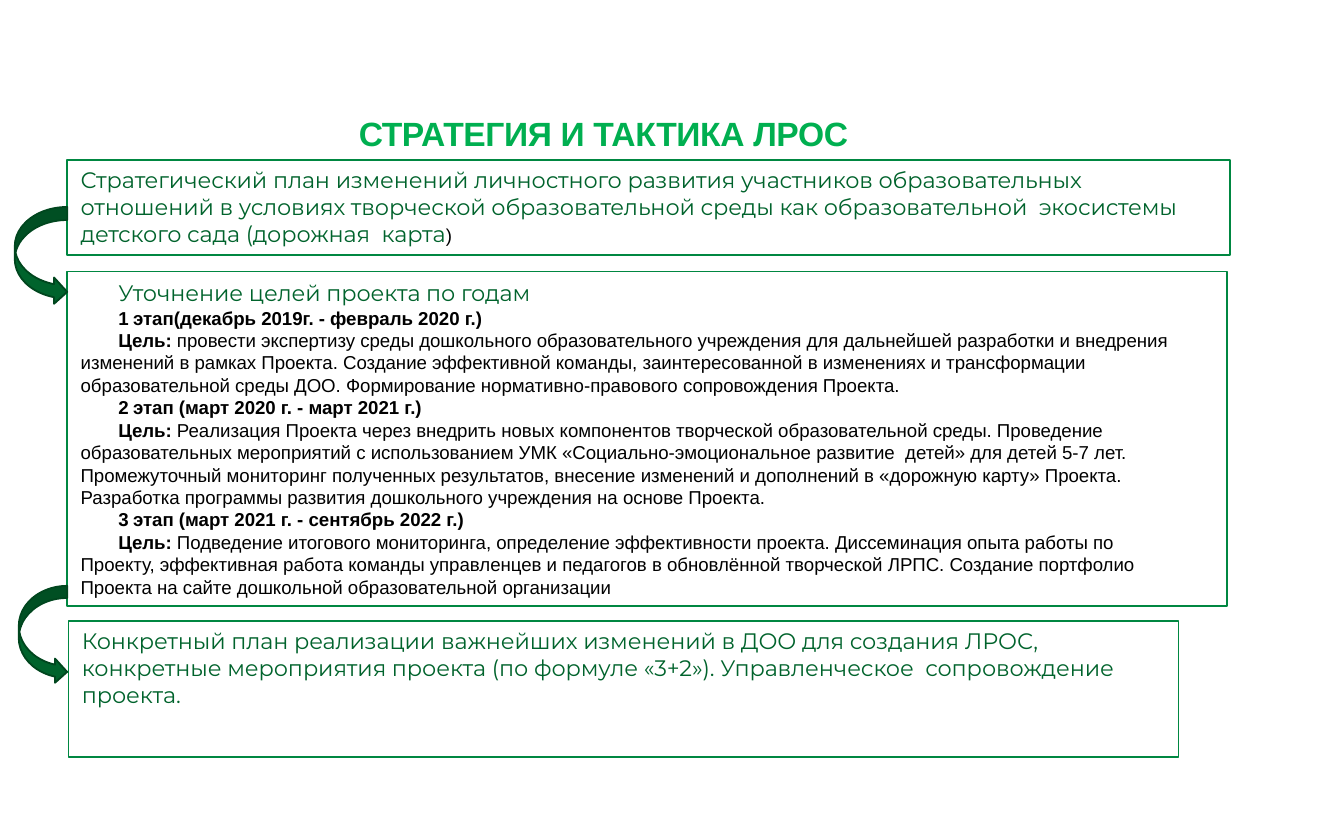
from lxml import etree
from pptx import Presentation
from pptx.dml.color import RGBColor
from pptx.enum.shapes import MSO_SHAPE
from pptx.enum.text import MSO_ANCHOR, PP_ALIGN
from pptx.oxml.ns import qn
from pptx.util import Inches, Pt

RECT, CURVE = MSO_SHAPE.RECTANGLE, MSO_SHAPE.CURVED_RIGHT_ARROW
TOP, LEFT = MSO_ANCHOR.TOP, PP_ALIGN.LEFT

THEME = {
    "frame": "008741", "arrow": "00632C", "edge": "00461E", "line": 0.96,
    # font, size, colour, bold, letter spacing in points
    "title": ("Arial", 18, "00AF50", True, -0.2),
    "lead": ("Montserrat", 12, "00632C", False, -0.07),
    "body": ("Arial", 10, "000000", False, -0.01),
    "bold": ("Arial", 10, "000000", True, 0),
}

TITLE = "СТРАТЕГИЯ И ТАКТИКА ЛРОС"
PLAN = ("Стратегический план изменений личностного развития участников "
        "образовательных отношений в условиях творческой образовательной "
        "среды как образовательной  экосистемы детского сада "
        "(дорожная  карта")
GOALS = "Уточнение целей проекта по годам"
STAGES = [
    ("этап(декабрь 2019г. - февраль 2020 г.)",
     "провести экспертизу среды дошкольного образовательного учреждения для "
     "дальнейшей разработки и внедрения изменений в рамках Проекта. Создание "
     "эффективной команды, заинтересованной в изменениях и трансформации "
     "образовательной среды ДОО. Формирование нормативно-правового "
     "сопровождения Проекта."),
    ("этап (март 2020 г. - март 2021 г.)",
     "Реализация Проекта через внедрить новых компонентов творческой "
     "образовательной среды. Проведение образовательных мероприятий с "
     "использованием УМК «Социально-эмоциональное развитие  детей» для детей "
     "5-7 лет. Промежуточный мониторинг полученных результатов, внесение "
     "изменений и дополнений в «дорожную карту» Проекта. Разработка программы "
     "развития дошкольного учреждения на основе Проекта."),
    ("этап (март 2021 г. - сентябрь 2022 г.)",
     "Подведение итогового мониторинга, определение эффективности проекта. "
     "Диссеминация опыта работы по Проекту, эффективная работа команды "
     "управленцев и педагогов в обновлённой творческой ЛРПС. Создание "
     "портфолио Проекта на сайте дошкольной образовательной организации"),
]
STEPS = ("Конкретный план реализации важнейших изменений в ДОО для создания "
         "ЛРОС, конкретные мероприятия проекта (по формуле «3+2»). "
         "Управленческое  сопровождение проекта.")

# left, top, width, height
TITLE_AT = (2.66, 0.83, 3.74, 0.33)
PLAN_AT = (0.5, 1.19, 8.65, 0.71)
GOALS_AT = (0.5, 2.02, 8.63, 2.49)
TEXT_AT = (0.59, 2.06, 8.35, 2.4)
STEPS_AT = (0.51, 4.62, 8.26, 1.01)
ARROWS = [(0.11, 1.54, 0.39, 0.73), (0.14, 4.36, 0.36, 0.73)]


def color(name):
    return RGBColor.from_string(name)


def place(at):
    return [Inches(n) for n in at]


def setup(frame, top, right=0, wrap=True):
    frame.word_wrap = wrap
    frame.vertical_anchor = TOP
    frame.margin_left = frame.margin_bottom = 0
    frame.margin_top, frame.margin_right = Inches(top), Inches(right)


def write(para, parts, left=0.0, first=0.0, num=0):
    """Fill a paragraph with (style, text) parts; num starts a numbered item."""
    props = para._p.get_or_add_pPr()
    props.set("marL", str(Inches(left)))
    props.set("indent", str(Inches(first)))
    if num:
        etree.SubElement(props, qn("a:buAutoNum"), type="arabicPlain",
                         startAt=str(num))
        tabs = etree.SubElement(props, qn("a:tabLst"))
        etree.SubElement(tabs, qn("a:tab"), pos=str(Inches(left)), algn="l")
    para.alignment = LEFT
    para.space_before = Pt(0)
    for style, text in parts:
        face, size, hue, bold, gap = THEME[style]
        run = para.add_run()
        run.text = text
        font = run.font
        font.name, font.size, font.bold = face, Pt(size), bold
        font.color.rgb = color(hue)
        run._r.get_or_add_rPr().set("spc", str(round(gap * 100)))


def draw(slide, kind, at, edge, fill=None):
    shape = slide.shapes.add_shape(kind, *place(at))
    shape.shadow.inherit = False
    shape.line.color.rgb = color(THEME[edge])
    shape.line.width = Pt(THEME["line"])
    if fill:
        shape.fill.solid()
        shape.fill.fore_color.rgb = color(THEME[fill])
    else:
        shape.fill.background()
    return shape


def main():
    deck = Presentation()
    deck.slide_width, deck.slide_height = Inches(10), Inches(6.25)
    slide = deck.slides.add_slide(deck.slide_layouts[5])

    title = slide.shapes.title
    title.left, title.top, title.width, title.height = place(TITLE_AT)
    setup(title.text_frame, 0.01, wrap=False)
    write(title.text_frame.paragraphs[0], [("title", TITLE)], 0.01)

    boxes = [
        (PLAN_AT, 0.05, 0.2, [("lead", PLAN), ("body", ")")]),
        (STEPS_AT, 0.05, 0.3, [("lead", STEPS)]),
    ]
    for at, top, right, parts in boxes:
        frame = draw(slide, RECT, at, "frame").text_frame
        setup(frame, top, right)
        write(frame.paragraphs[0], parts, 0.1)

    draw(slide, RECT, GOALS_AT, "frame")
    frame = slide.shapes.add_textbox(*place(TEXT_AT)).text_frame
    setup(frame, 0.02, 0.08)
    write(frame.paragraphs[0], [("lead", GOALS)], 0.29)
    for num, (stage, aim) in enumerate(STAGES, 1):
        write(frame.add_paragraph(), [("bold", stage)], 0.4, -0.11, num)
        write(frame.add_paragraph(), [("bold", "Цель: "), ("body", aim)],
              0.01, 0.28)

    for at in ARROWS:
        draw(slide, CURVE, at, "edge", "arrow")

    deck.save("out.pptx")


if __name__ == "__main__":
    main()
